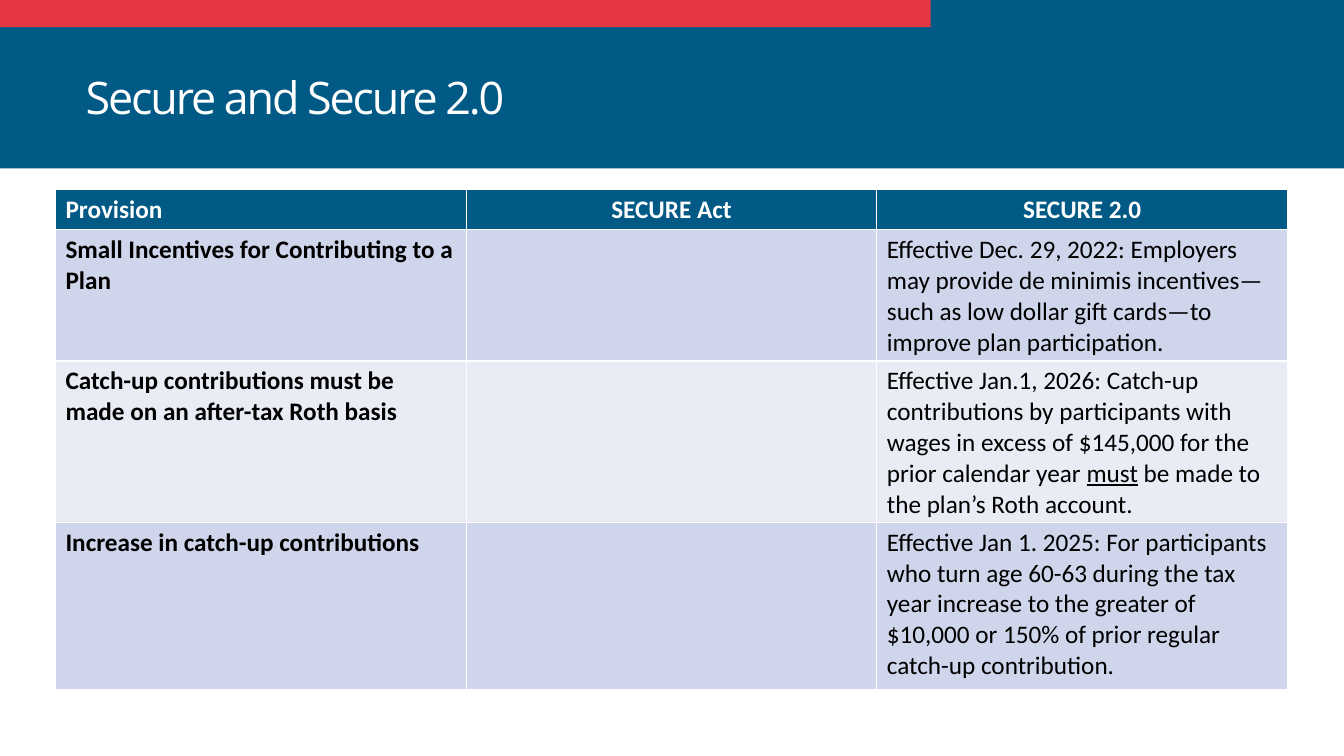
from pptx import Presentation
from pptx.dml.color import RGBColor
from pptx.enum.shapes import MSO_SHAPE
from pptx.enum.text import MSO_ANCHOR, PP_ALIGN
from pptx.util import Inches, Pt

RECT = MSO_SHAPE.RECTANGLE
MIDDLE = MSO_ANCHOR.MIDDLE
CENTER = PP_ALIGN.CENTER
LEFT = PP_ALIGN.LEFT

BLUE = RGBColor(0x00, 0x5A, 0x85)
RED = RGBColor(0xE6, 0x36, 0x41)
WHITE = RGBColor(0xFF, 0xFF, 0xFF)
BLACK = RGBColor(0x00, 0x00, 0x00)
BANDS = [RGBColor(0xCF, 0xD5, 0xEA), RGBColor(0xE9, 0xEB, 0xF5)]

WIDTH, HEIGHT = 13.33, 7.5
HEADS = ["Provision", "SECURE Act", "SECURE 2.0"]
# Each cell is a list of runs; every second run is underlined.
ROWS = [
    [["Small Incentives for Contributing to a Plan"], [],
     ["Effective Dec. 29, 2022: Employers may provide de minimis incentives—"
      "such as low dollar gift cards—to improve plan participation."]],
    [["Catch-up contributions must be made on an after-tax Roth basis"], [],
     ["Effective Jan.1, 2026: Catch-up contributions by participants with "
      "wages in excess of $145,000 for the prior calendar year ",
      "must", " be made to the plan’s Roth account."]],
    [["Increase in catch-up contributions"], [],
     ["Effective Jan 1. 2025: For participants who turn age 60-63 during the "
      "tax year increase to the greater of $10,000 or 150% of prior regular "
      "catch-up contribution."]],
]
TALL = [0.38, 1.2, 1.39, 1.66]


def add_bar(slide, left, top, width, height, color):
    bar = slide.shapes.add_shape(RECT, Inches(left), Inches(top),
                                 Inches(width), Inches(height))
    bar.shadow.inherit = False
    bar.fill.solid()
    bar.fill.fore_color.rgb = color
    bar.line.fill.background()


def add_title(slide, left, top, width, height, words):
    box = slide.shapes.add_textbox(Inches(left), Inches(top),
                                   Inches(width), Inches(height))
    frame = box.text_frame
    frame.word_wrap = True
    frame.vertical_anchor = MIDDLE
    frame.text = words
    para = frame.paragraphs[0]
    para.line_spacing = 0.9
    run = para.runs[0]
    run.font.name = "Open Sans"
    run.font.size = Pt(32)
    run.font.color.rgb = WHITE
    run.font._element.set("spc", "-150")


def fill_cell(cell, texts, fill, color, bold, align):
    cell.fill.solid()
    cell.fill.fore_color.rgb = fill
    para = cell.text_frame.paragraphs[0]
    para.alignment = align
    for i, text in enumerate(texts):
        run = para.add_run()
        run.text = text
        font = run.font
        font.name = "Calibri"
        font.size = Pt(18)
        font.bold = bold
        font.color.rgb = color
        if i % 2:
            font.underline = True


def add_grid(slide, left, top, width):
    frame = slide.shapes.add_table(len(TALL), len(HEADS), Inches(left),
                                   Inches(top), Inches(width),
                                   Inches(sum(TALL)))
    table = frame.table
    for row, tall in zip(table.rows, TALL):
        row.height = Inches(tall)
    for c, head in enumerate(HEADS):
        fill_cell(table.cell(0, c), [head], BLUE, WHITE, True,
                  CENTER if c else LEFT)
    for r, row in enumerate(ROWS):
        for c, texts in enumerate(row):
            fill_cell(table.cell(r + 1, c), texts, BANDS[r % 2], BLACK,
                      c == 0, LEFT)


def main():
    deck = Presentation()
    deck.slide_width = Inches(WIDTH)
    deck.slide_height = Inches(HEIGHT)
    slide = deck.slides.add_slide(deck.slide_layouts[6])
    add_bar(slide, 0, 0, WIDTH, 1.67, BLUE)
    add_bar(slide, 0, 0, 9.23, 0.27, RED)
    add_title(slide, 0.75, 0.27, 7.08, 1.45, "Secure and Secure 2.0")
    add_grid(slide, 0.55, 1.88, 12.22)
    deck.save("out.pptx")


if __name__ == "__main__":
    main()
